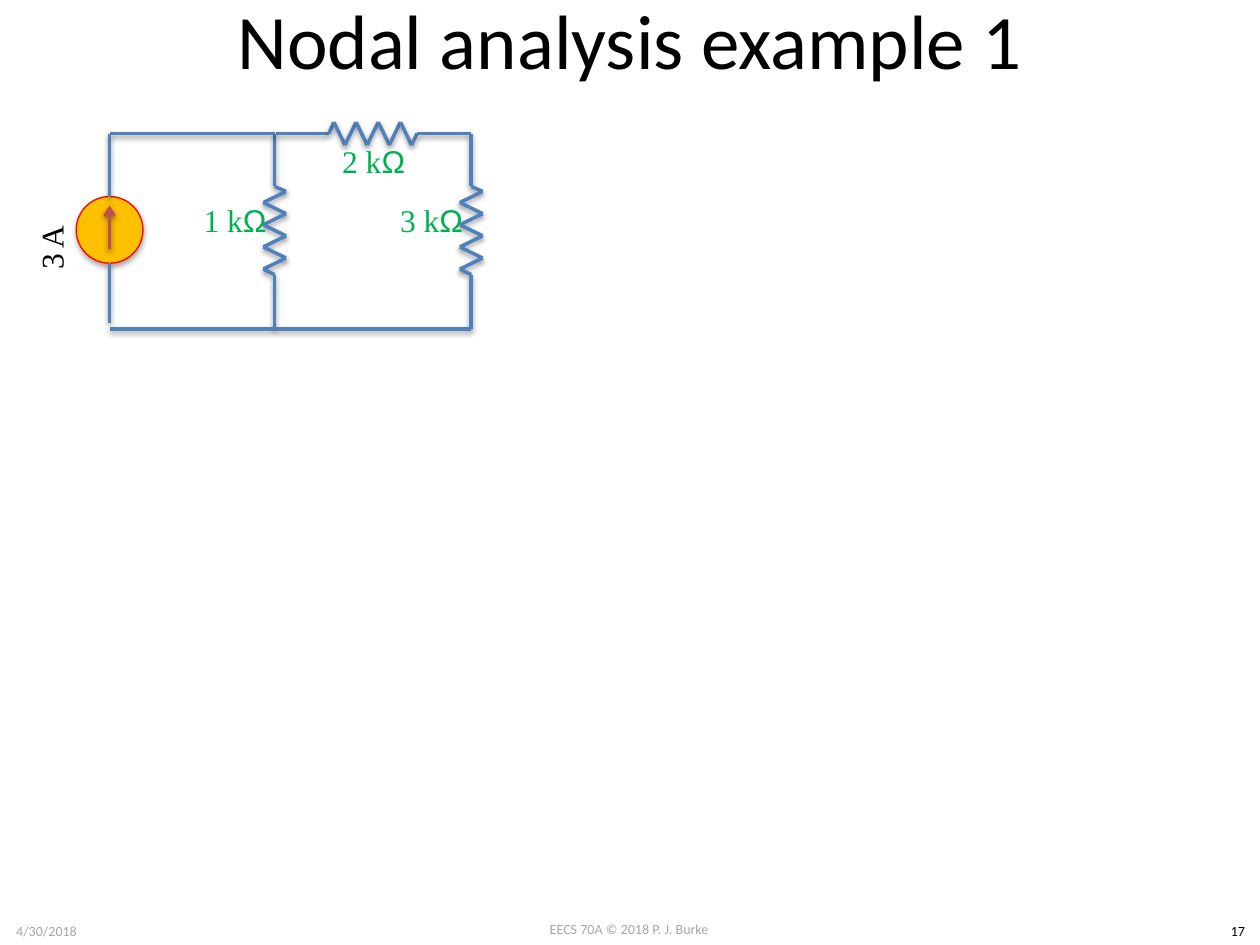
from itertools import pairwise

from lxml.etree import SubElement
from pptx import Presentation
from pptx.dml.color import RGBColor
from pptx.enum.shapes import MSO_CONNECTOR, MSO_SHAPE
from pptx.enum.text import MSO_ANCHOR, PP_ALIGN
from pptx.oxml.ns import qn
from pptx.util import Inches, Pt

WIRE_BLUE = RGBColor(0x4F, 0x81, 0xBD)
ARROW_RED = RGBColor(0xC0, 0x50, 0x4D)
SOURCE_FILL = RGBColor(0xFF, 0xC0, 0x00)
SOURCE_EDGE = RGBColor(0xFF, 0x00, 0x00)
VALUE_GREEN = RGBColor(0x00, 0xB0, 0x50)
FOOTER_GREY = RGBColor(0xA6, 0xA6, 0xA6)
BLACK = RGBColor(0x00, 0x00, 0x00)

# Circuit grid, in inches
TOP, BOTTOM = 1.06, 2.61
LEFT, MIDDLE, RIGHT = 0.87, 2.18, 3.74
SOURCE_TOP, SOURCE_SIZE = 1.56, 0.53


class CircuitSlide:
    """Holds the slide and the drawing style; lengths are in inches.

    Lines and shapes keep the soft shadow of the theme.
    """

    def __init__(self, slide):
        self.slide = slide
        self.shapes = slide.shapes

    def title(self, text):
        title = self.shapes.title
        title.left, title.top = Inches(0.5), Inches(-0.17)
        title.width, title.height = Inches(9), Inches(0.95)
        title.text_frame.text = text
        title.text_frame.vertical_anchor = MSO_ANCHOR.MIDDLE
        heading = title.text_frame.paragraphs[0]
        heading.alignment = PP_ALIGN.CENTER
        self.style(heading.font, 44, "Calibri", BLACK)

    def style(self, font, size, name, color):
        font.size, font.name = Pt(size), name
        font.color.rgb = color

    def label(self, box, text, size, name, color, anchor=MSO_ANCHOR.MIDDLE,
              wrap=True, rotation=0):
        label = self.shapes.add_textbox(*map(Inches, box))
        label.rotation = rotation
        frame = label.text_frame
        frame.word_wrap = wrap
        frame.vertical_anchor = anchor
        paragraph = frame.paragraphs[0]
        paragraph.alignment = PP_ALIGN.CENTER
        self.style(paragraph.font, size, name, color)
        paragraph.add_run().text = text
        return paragraph

    def resistance(self, left, top, kilo_ohms):
        value = self.label((left, top, 1.19, 0.73), f"{kilo_ohms} k",
                           18, "Times New Roman", VALUE_GREEN)
        ohm = value.add_run()
        ohm.text = "Ω"
        ohm.font.name = "Arial"

    def footer(self, box, text, color):
        self.label(box, text, 8, "Calibri", color, MSO_ANCHOR.TOP, wrap=False)

    def wire(self, start, end, color=WIRE_BLUE, shapes=None):
        wire = (shapes or self.shapes).add_connector(
            MSO_CONNECTOR.STRAIGHT, *map(Inches, (*start, *end)))
        wire.line.color.rgb = color
        wire.line.width = Pt(2)
        return wire

    def resistor(self, x, y, horizontal=False):
        """Draw two leads and a zigzag of eight corners, from (x, y)."""
        corners = [(0.46 + 0.088 * i, 0.09 * (-1) ** i) for i in range(8)]
        outline = [(0, 0), (0.33, 0), (0.42, 0), *corners,
                   (1.12, 0), (1.21, 0), (1.55, 0)]
        points = [(x + along, y - side) if horizontal else (x + side, y + along)
                  for along, side in outline]
        group = self.shapes.add_group_shape()
        for start, end in pairwise(points):
            self.wire(start, end, shapes=group.shapes)

    def current_source(self, x, top, size):
        parts = self.shapes.add_group_shape().shapes
        circle = parts.add_shape(MSO_SHAPE.OVAL, Inches(x - size / 2),
                                 Inches(top), Inches(size), Inches(size))
        circle.fill.solid()
        circle.fill.fore_color.rgb = SOURCE_FILL
        circle.line.color.rgb = SOURCE_EDGE
        circle.line.width = Pt(0.75)
        arrow = self.wire((x, top + 0.42), (x, top + 0.07), ARROW_RED, parts)
        SubElement(arrow.line._get_or_add_ln(), qn("a:tailEnd"), type="arrow")
        self.wire((x, top), (x, TOP), shapes=parts)
        self.wire((x, top + size), (x, 2.56), shapes=parts)


def main():
    deck = Presentation()
    deck.slide_width, deck.slide_height = Inches(10), Inches(7.5)
    page = CircuitSlide(deck.slides.add_slide(deck.slide_layouts[5]))

    # Footer and title
    page.footer((3.83, 7.26, 2.33, 0.24), "EECS 70A © 2018 P. J. Burke", FOOTER_GREY)
    page.footer((0, 7.27, 0.74, 0.24), "4/30/2018", FOOTER_GREY)
    page.footer((9.65, 7.27, 0.35, 0.24), "17", BLACK)
    page.title("Nodal analysis example 1")

    # Resistors and wires
    page.resistor(MIDDLE, TOP)
    page.resistor(MIDDLE + 0.01, TOP, horizontal=True)
    page.resistor(RIGHT, TOP)
    page.wire((MIDDLE, TOP), (LEFT, TOP))
    page.wire((RIGHT, BOTTOM), (LEFT, BOTTOM))

    # Values
    for left, top, kilo_ohms in ((1.27, 1.38, 1), (2.83, 1.38, 3), (2.37, 0.91, 2)):
        page.resistance(left, top, kilo_ohms)
    page.label((-0.19, 1.6, 1.19, 0.73), "3 A", 18, "Times New Roman", BLACK,
               rotation=270)

    # Current source
    page.current_source(LEFT, SOURCE_TOP, SOURCE_SIZE)

    deck.save("out.pptx")


if __name__ == "__main__":
    main()
